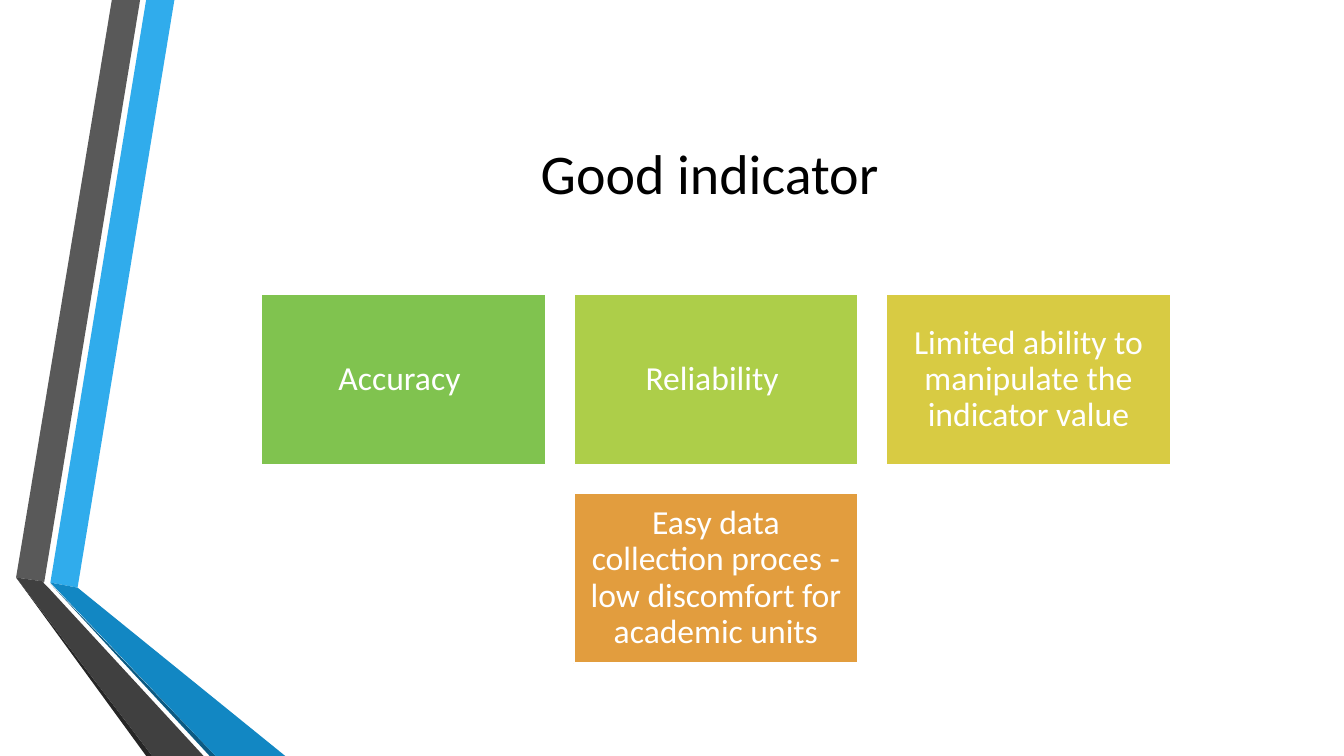
from pptx import Presentation
from pptx.dml.color import RGBColor
from pptx.enum.shapes import MSO_SHAPE as SHAPE
from pptx.enum.text import MSO_ANCHOR as ANCHOR, PP_ALIGN as ALIGN
from pptx.util import Pt

PX = 9144  # EMU per px, 100 px to the inch
WIDTH, HEIGHT = 1333, 750
FONT = "Calibri"
COLORS = {
    "black": "000000", "white": "FFFFFF",
    "blue": "30ACEC", "blue_fold": "1287C3", "blue_edge": "0C5A82",
    "gray": "595959", "gray_fold": "404040", "gray_edge": "262626",
    "green": "80C34F", "lime": "ADCE49", "yellow": "D8CB43", "orange": "E29D3E",
}
# Outlines relative to the top left corner of the ribbon box
RIBBONS = [
    ("blue", [(34, 578), (61, 583), (157, 0), (129, 0)]),
    ("gray", [(123, 0), (95, 0), (0, 573), (28, 577)]),
    ("gray_edge", [(0, 573), (129, 750), (135, 750)]),
    ("blue_edge", [(34, 579), (192, 750), (198, 750)]),
    ("blue_fold", [(34, 578), (198, 750), (267, 750), (61, 583)]),
    ("gray_fold", [(186, 750), (32, 583), (27, 578), (28, 577), (0, 573), (135, 750)]),
]
QUALITIES = [
    [("Accuracy ", "green"), ("Reliability ", "lime"),
     ("Limited ability to manipulate the indicator value", "yellow")],
    [("Easy data collection proces - low discomfort for academic units", "orange")],
]


def rgb(name):
    return RGBColor.from_string(COLORS[name])


def emu(*lengths):
    return [v * PX for v in lengths]


def write(s, text, size, color, inset=(10, 5), spacing=1.0):
    tf = s.text_frame
    dx, dy = emu(*inset)
    frame = {"word_wrap": True, "vertical_anchor": ANCHOR.MIDDLE,
             "margin_left": dx, "margin_right": dx,
             "margin_top": dy, "margin_bottom": dy}
    for name, value in frame.items():
        setattr(tf, name, value)
    p = tf.paragraphs[0]
    p.alignment, p.line_spacing = ALIGN.CENTER, spacing
    r = p.add_run()
    r.text = text
    r.font.name, r.font.size = FONT, Pt(size)
    r.font.color.rgb = rgb(color)


def add_ribbons(slide, left, top):
    for color, points in RIBBONS:
        start, *rest = [(left + x, top + y) for x, y in points]
        outline = slide.shapes.build_freeform(*start, scale=PX)
        outline.add_line_segments(rest, close=True)
        s = outline.convert_to_shape()
        s.shadow.inherit = False
        s.fill.solid()
        s.fill.fore_color.rgb = rgb(color)
        s.line.fill.background()


def add_title(slide, left, top, width, height):
    s = slide.shapes.add_textbox(*emu(left, top, width, height))
    write(s, "Good indicator ", 40, "black")


def add_cards(slide, left, top, width, height, gap=28):
    """Fill the box with rows of equal cards; a short row is centred."""
    columns = max(len(row) for row in QUALITIES)
    card_w = (width - gap * (columns - 1)) // columns
    card_h = (height - gap * (len(QUALITIES) - 1)) // len(QUALITIES)
    for i, row in enumerate(QUALITIES):
        indent = (columns - len(row)) * (card_w + gap) // 2
        for j, (text, color) in enumerate(row):
            x = left + indent + j * (card_w + gap)
            y = top + i * (card_h + gap)
            s = slide.shapes.add_shape(SHAPE.RECTANGLE, *emu(x, y, card_w, card_h))
            s.shadow.inherit = False
            s.fill.solid()
            s.fill.fore_color.rgb = rgb(color)
            s.line.color.rgb = rgb("white")
            s.line.width = Pt(1.25)
            write(s, text, 24, "white", inset=(10, 10), spacing=0.9)


def main():
    prs = Presentation()
    prs.slide_width, prs.slide_height = emu(WIDTH, HEIGHT)
    slide = prs.slides.add_slide(prs.slide_layouts[6])
    add_ribbons(slide, 16, 0)
    add_title(slide, 162, 75, 1096, 192)
    add_cards(slide, 259, 292, 902, 366)
    prs.save("out.pptx")


if __name__ == "__main__":
    main()
